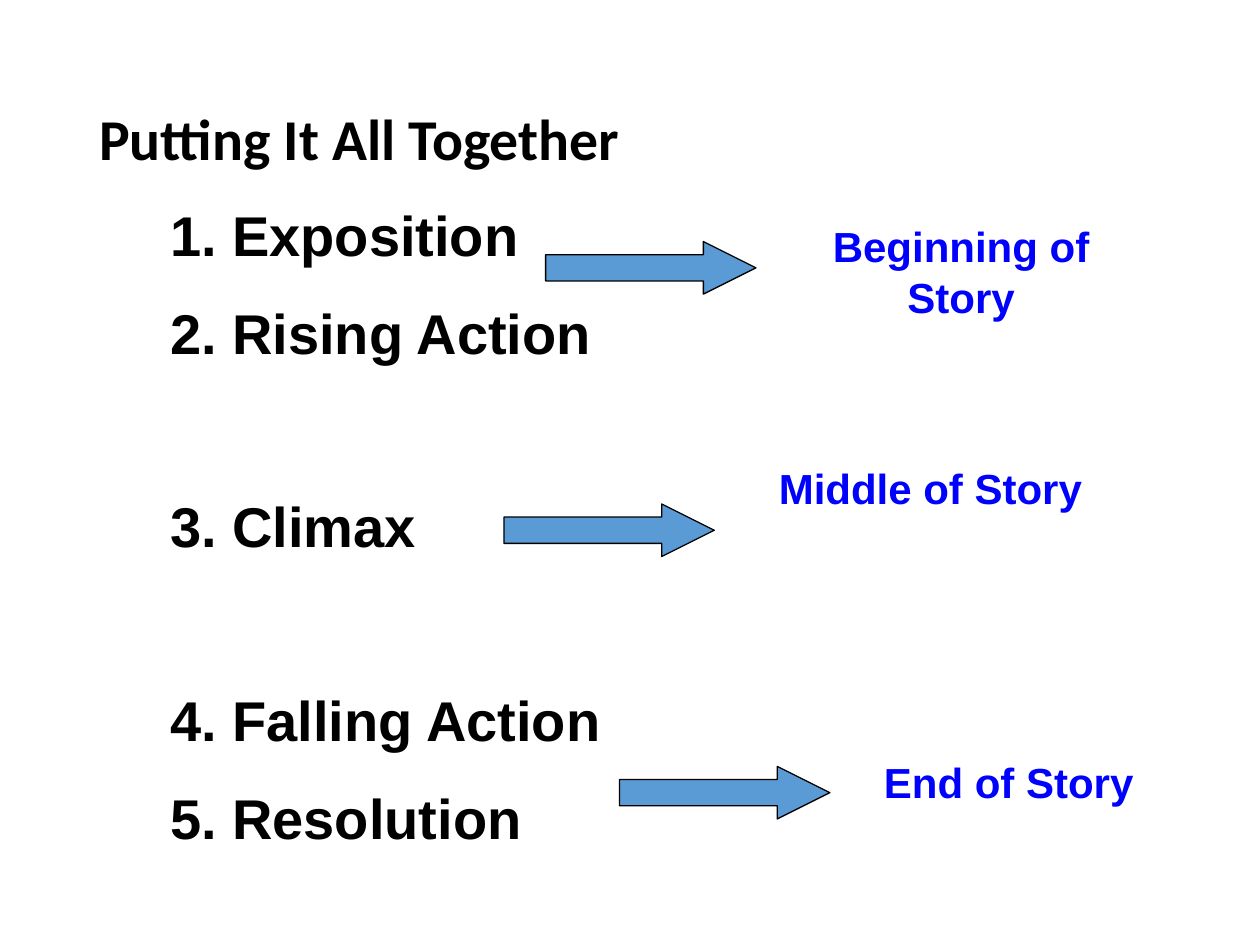
"""Build the slide that maps five plot stages to the parts of a story."""
from pptx import Presentation
from pptx import util as u
from pptx.dml.color import RGBColor
from pptx.enum import shapes, text

TITLE = ("Putting It All Together", (1.75, 1.02, 21.9, 3.68))
STAGES = [
    ("1. Exposition", 0),
    ("2. Rising Action", 17.6),
    ("3. Climax", 72),
    ("4. Falling Action", 72),
    ("5. Resolution", 17.6),
]
STAGES_BOX = (3.18, 3.92, 18.62, 13.82)
PARTS = [
    ("Beginning of Story", (16.3, 4.33, 6.15, 2.29), text.PP_ALIGN.CENTER),
    ("Middle of Story", (15.45, 9.2, 7.19, 1.27), text.PP_ALIGN.LEFT),
    ("End of Story", (17.57, 15.13, 5.72, 1.27), text.PP_ALIGN.LEFT),
]
ARROWS = [(11, 4.87), (10.16, 10.16), (12.49, 15.45)]
ARROW_SIZE = (4.24, 1.06)
BLACK, BLUE, ARROW_BLUE = "000000", "0000FF", "5B9BD5"


def color(value):
    return RGBColor.from_string(value)


def add_text(slide, lines, box, size, font="Arial", ink=BLACK,
             align=text.PP_ALIGN.LEFT, anchor=text.MSO_ANCHOR.TOP,
             fit=text.MSO_AUTO_SIZE.SHAPE_TO_FIT_TEXT, spacing=1.0):
    frame = slide.shapes.add_textbox(*map(u.Cm, box)).text_frame
    frame.word_wrap = True
    frame.auto_size = fit
    frame.vertical_anchor = anchor
    for index, (words, gap) in enumerate(lines):
        line = frame.add_paragraph() if index else frame.paragraphs[0]
        line.alignment = align
        line.line_spacing = spacing
        line.space_before = u.Pt(gap)
        run = line.add_run()
        run.text = words
        run.font.name = font
        run.font.size = u.Pt(size)
        run.font.bold = True
        run.font.color.rgb = color(ink)


def add_arrow(slide, corner):
    arrow = slide.shapes.add_shape(
        shapes.MSO_SHAPE.RIGHT_ARROW, *map(u.Cm, corner + ARROW_SIZE))
    arrow.adjustments[0] = 0.5
    arrow.adjustments[1] = 1
    arrow.shadow.inherit = False
    arrow.fill.solid()
    arrow.fill.fore_color.rgb = color(ARROW_BLUE)
    arrow.line.color.rgb = color(BLACK)
    arrow.line.width = u.Pt(0.75)


def main():
    deck = Presentation()
    deck.slide_width, deck.slide_height = u.Cm(25.4), u.Cm(19.05)
    slide = deck.slides.add_slide(deck.slide_layouts[6])
    heading, heading_box = TITLE
    add_text(slide, [(heading, 0)], heading_box, 33, font="Calibri",
             anchor=text.MSO_ANCHOR.MIDDLE, fit=text.MSO_AUTO_SIZE.NONE,
             spacing=0.9)
    add_text(slide, STAGES, STAGES_BOX, 32)
    for corner in ARROWS:
        add_arrow(slide, corner)
    for part, box, align in PARTS:
        add_text(slide, [(part, 0)], box, 24, ink=BLUE, align=align)
    deck.save("out.pptx")


if __name__ == "__main__":
    main()
